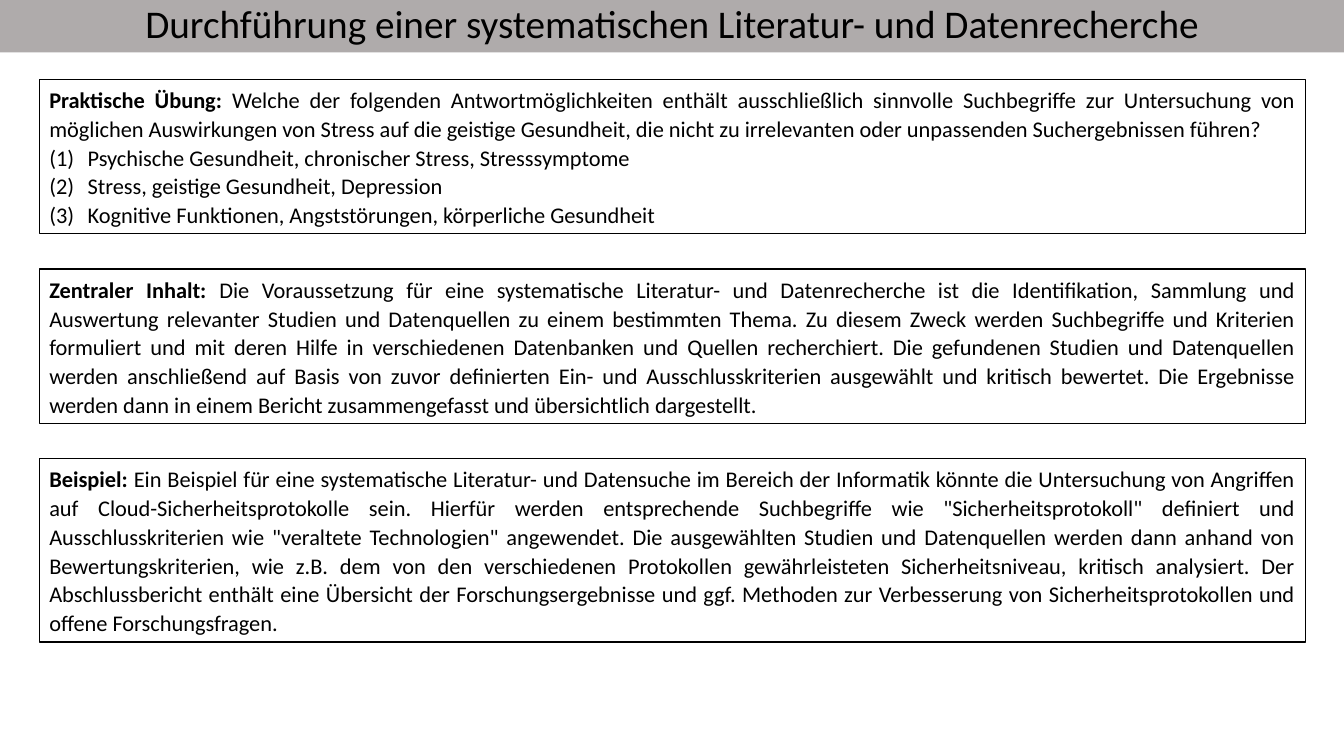
"""Builds a slide on systematic literature and data research with three framed texts."""
from dataclasses import dataclass

from lxml import etree
from pptx import Presentation
from pptx.dml.color import RGBColor
from pptx.enum.text import MSO_ANCHOR, MSO_AUTO_SIZE, PP_ALIGN
from pptx.oxml.ns import qn
from pptx.util import Inches, Pt

BOTTOM = MSO_ANCHOR.BOTTOM
NO_FIT = MSO_AUTO_SIZE.NONE
CENTER, JUSTIFY = PP_ALIGN.CENTER, PP_ALIGN.JUSTIFY
WIDTH, HEIGHT = Inches(13.33), Inches(7.5)


@dataclass(frozen=True)
class Theme:
    font: str = "Calibri"
    ink: RGBColor = RGBColor(0, 0, 0)
    bar: RGBColor = RGBColor(0xAF, 0xAB, 0xAB)
    title_size: Pt = Pt(28)
    body_size: Pt = Pt(16)
    frame: Pt = Pt(1)


@dataclass(frozen=True)
class Box:
    label: str
    text: str
    height: float
    choices: tuple[str, ...] = ()
    before: int = 0
    after: int = 0


THEME = Theme()
TITLE = "Durchführung einer systematischen Literatur- und Datenrecherche"
BAR_HEIGHT = 6.93
BOX_LEFT, BOX_TOP, BOX_WIDTH, BOX_GAP = 2.93, 10.53, 94.22, 4.67
INDENT = 2.85

BOXES = (
    Box("Praktische Übung: ",
        "Welche der folgenden Antwortmöglichkeiten enthält ausschließlich sinnvolle "
        "Suchbegriffe zur Untersuchung von möglichen Auswirkungen von Stress auf die "
        "geistige Gesundheit, die nicht zu irrelevanten oder unpassenden "
        "Suchergebnissen führen?",
        20.4,
        choices=("Psychische Gesundheit, chronischer Stress, Stresssymptome",
                 "Stress, geistige Gesundheit, Depression",
                 "Kognitive Funktionen, Angststörungen, körperliche Gesundheit")),
    Box("Zentraler Inhalt: ",
        "Die Voraussetzung für eine systematische Literatur- und Datenrecherche ist die "
        "Identifikation, Sammlung und Auswertung relevanter Studien und Datenquellen zu "
        "einem bestimmten Thema. Zu diesem Zweck werden Suchbegriffe und Kriterien "
        "formuliert und mit deren Hilfe in verschiedenen Datenbanken und Quellen "
        "recherchiert. Die gefundenen Studien und Datenquellen werden anschließend auf "
        "Basis von zuvor definierten Ein- und Ausschlusskriterien ausgewählt und "
        "kritisch bewertet. Die Ergebnisse werden dann in einem Bericht "
        "zusammengefasst und übersichtlich dargestellt.",
        20.4, before=10, after=8),
    Box("Beispiel: ",
        "Ein Beispiel für eine systematische Literatur- und Datensuche im Bereich der "
        "Informatik könnte die Untersuchung von Angriffen auf "
        "Cloud-Sicherheitsprotokolle sein. Hierfür werden entsprechende Suchbegriffe "
        'wie "Sicherheitsprotokoll" definiert und Ausschlusskriterien wie "veraltete '
        'Technologien" angewendet. Die ausgewählten Studien und Datenquellen werden '
        "dann anhand von Bewertungskriterien, wie z.B. dem von den verschiedenen "
        "Protokollen gewährleisteten Sicherheitsniveau, kritisch analysiert. Der "
        "Abschlussbericht enthält eine Übersicht der Forschungsergebnisse und ggf. "
        "Methoden zur Verbesserung von Sicherheitsprotokollen und offene "
        "Forschungsfragen.",
        24.27, after=8),
)


def across(percent: float) -> int:
    return round(WIDTH * percent / 100)


def down(percent: float) -> int:
    return round(HEIGHT * percent / 100)


def format_paragraph(p, size: Pt, align: PP_ALIGN, spacing: float,
                     before: int = 0, after: int = 0) -> None:
    p.alignment, p.line_spacing = align, spacing
    p.space_before, p.space_after = Pt(before), Pt(after)
    p.font.name, p.font.size = THEME.font, size
    p.font.color.rgb = THEME.ink


def number_paragraph(p) -> None:
    pPr = p._p.get_or_add_pPr()
    pPr.set("marL", str(across(INDENT)))
    pPr.set("indent", str(-across(INDENT)))
    bullet = etree.Element(qn("a:buAutoNum"), type="arabicParenBoth")
    pPr.find(qn("a:defRPr")).addprevious(bullet)


def draw_title(s) -> None:
    sp = s.shapes.title
    sp.left, sp.top, sp.width, sp.height = 0, 0, WIDTH, down(BAR_HEIGHT)
    sp.fill.solid()
    sp.fill.fore_color.rgb = THEME.bar
    tf = sp.text_frame
    tf.text = TITLE
    tf.auto_size, tf.vertical_anchor = NO_FIT, BOTTOM
    format_paragraph(tf.paragraphs[0], THEME.title_size, CENTER, 0.9)


def draw_box(s, box: Box, top: float) -> None:
    sp = s.shapes.add_textbox(across(BOX_LEFT), down(top), across(BOX_WIDTH), down(box.height))
    sp.line.color.rgb, sp.line.width = THEME.ink, THEME.frame
    tf = sp.text_frame
    tf.word_wrap, tf.auto_size = True, NO_FIT
    p = tf.paragraphs[0]
    format_paragraph(p, THEME.body_size, JUSTIFY, 1.07, box.before, box.after)
    for text, bold in ((box.label, True), (box.text, False)):
        r = p.add_run()
        r.text, r.font.bold = text, bold
    for choice in box.choices:
        p = tf.add_paragraph()
        p.text = choice
        format_paragraph(p, THEME.body_size, JUSTIFY, 1.07)
        number_paragraph(p)


def main() -> None:
    prs = Presentation()
    prs.slide_width, prs.slide_height = WIDTH, HEIGHT
    s = prs.slides.add_slide(prs.slide_layouts.get_by_name("Title Only"))
    draw_title(s)
    top = BOX_TOP
    for box in BOXES:
        draw_box(s, box, top)
        top += box.height + BOX_GAP
    prs.save("out.pptx")


if __name__ == "__main__":
    main()
